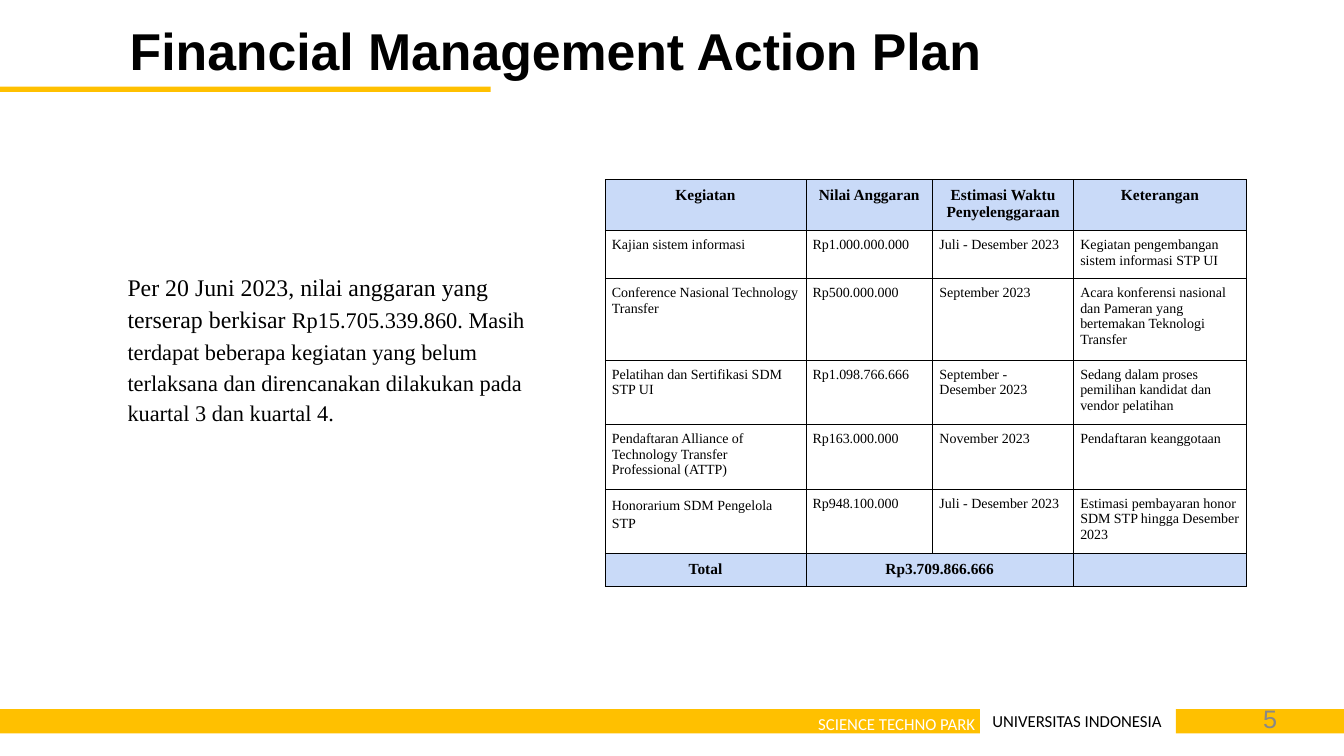
import pptx
import pptx.dml.color
import pptx.enum.shapes
import pptx.enum.text
import pptx.oxml
import pptx.oxml.ns
import pptx.util
from dataclasses import dataclass
from lxml import etree

Pt = pptx.util.Pt
ALIGN = pptx.enum.text.PP_ALIGN


@dataclass(frozen=True)
class Theme:
    gold: str = "FFC000"
    ink: str = "000000"
    paper: str = "FFFFFF"
    page_grey: str = "888888"
    band: str = "C9DAF8"
    heading_font: str = "Arial"
    footer_font: str = "Calibri"
    body_font: str = "Times New Roman"
    title_size: float = 37
    lead_size: float = 17
    body_size: float = 16
    page_size: float = 18
    footer_size: float = 12
    head_size: float = 11
    cell_size: float = 10


THEME = Theme()
HEADINGS = ["Kegiatan", "Nilai Anggaran", "Estimasi Waktu Penyelenggaraan", "Keterangan"]
ACTIVITIES = [
    ["Kajian sistem informasi", "Rp1.000.000.000", "Juli - Desember 2023",
     "Kegiatan pengembangan sistem informasi STP UI"],
    ["Conference Nasional Technology Transfer", "Rp500.000.000", "September 2023",
     "Acara konferensi nasional dan Pameran yang bertemakan Teknologi Transfer"],
    ["Pelatihan dan Sertifikasi SDM STP UI", "Rp1.098.766.666", "September - Desember 2023",
     "Sedang dalam proses pemilihan kandidat dan vendor pelatihan"],
    ["Pendaftaran Alliance of Technology Transfer Professional (ATTP)", "Rp163.000.000",
     "November 2023", "Pendaftaran keanggotaan"],
    ["Honorarium SDM Pengelola STP", "Rp948.100.000", "Juli - Desember 2023",
     "Estimasi pembayaran honor SDM STP hingga Desember 2023"],
]
TOTALS = ["Total", "Rp3.709.866.666", "", ""]
COLUMN_WIDTHS = [143.3, 90.7, 100.6, 123.5]
ROW_HEIGHTS = [36.4, 34.3, 57.9, 45.8, 46.2, 45.8, 23.6]


def rgb(value):
    return pptx.dml.color.RGBColor.from_string(value)


def add_run(paragraph, text, font, size, color=THEME.ink, bold=False):
    run = paragraph.add_run()
    run.text = text
    run.font.name = font
    run.font.size = Pt(size)
    run.font.bold = bold
    run.font.color.rgb = rgb(color)


def add_bar(slide, left, top, width, height):
    bar = slide.shapes.add_shape(pptx.enum.shapes.MSO_SHAPE.RECTANGLE,
                                 Pt(left), Pt(top), Pt(width), Pt(height))
    bar.shadow.inherit = False
    bar.fill.solid()
    bar.fill.fore_color.rgb = rgb(THEME.gold)
    bar.line.fill.background()


def add_text(slide, box, insets, align=ALIGN.LEFT, indent=0.0):
    frame = slide.shapes.add_textbox(*map(Pt, box)).text_frame
    frame.word_wrap = True
    frame.auto_size = pptx.enum.text.MSO_AUTO_SIZE.SHAPE_TO_FIT_TEXT
    (frame.margin_left, frame.margin_top,
     frame.margin_right, frame.margin_bottom) = map(Pt, insets)
    paragraph = frame.paragraphs[0]
    paragraph.alignment = align
    if indent:
        paragraph._p.get_or_add_pPr().set("marL", str(Pt(indent)))
    return paragraph


def add_borders(cell):
    properties = cell._tc.get_or_add_tcPr()
    for side in ("a:lnL", "a:lnR", "a:lnT", "a:lnB"):
        border = etree.SubElement(properties, pptx.oxml.ns.qn(side), w=str(Pt(0.5)))
        fill = etree.SubElement(border, pptx.oxml.ns.qn("a:solidFill"))
        etree.SubElement(fill, pptx.oxml.ns.qn("a:srgbClr"), val=THEME.ink)


def fill_cell(cell, text, emphasized):
    cell.margin_left = cell.margin_right = Pt(4.8)
    cell.margin_top = cell.margin_bottom = Pt(5)
    add_borders(cell)
    if emphasized:
        cell.fill.solid()
        cell.fill.fore_color.rgb = rgb(THEME.band)
    else:
        cell.fill.background()
    paragraph = cell.text_frame.paragraphs[0]
    paragraph.alignment = ALIGN.CENTER if emphasized else ALIGN.LEFT
    size = THEME.head_size if emphasized else THEME.cell_size
    if text:
        add_run(paragraph, text, THEME.body_font, size, bold=emphasized)
    else:
        etree.SubElement(paragraph._p, pptx.oxml.ns.qn("a:endParaRPr"), sz=str(int(size * 100)))


def add_budget_table(slide, left, top):
    rows = [HEADINGS, *ACTIVITIES, TOTALS]
    last = len(rows) - 1
    budget = slide.shapes.add_table(len(rows), len(HEADINGS), Pt(left), Pt(top),
                                    Pt(sum(COLUMN_WIDTHS)), Pt(sum(ROW_HEIGHTS))).table
    budget.first_row = budget.horz_banding = False
    for column, width in zip(budget.columns, COLUMN_WIDTHS):
        column.width = Pt(width)
    for row, height in zip(budget.rows, ROW_HEIGHTS):
        row.height = Pt(height)
    for r, texts in enumerate(rows):
        for c, text in enumerate(texts):
            fill_cell(budget.cell(r, c), text, r in (0, last))
    budget.cell(last, 1).merge(budget.cell(last, 2))
    budget.cell(last - 1, 0).text_frame.paragraphs[0].line_spacing = 1.15


def main():
    deck = pptx.Presentation()
    deck.slide_width, deck.slide_height = Pt(960), Pt(540)
    slide = deck.slides.add_slide(deck.slide_layouts[6])

    add_bar(slide, 0, 61.9, 350.6, 3.7)
    add_bar(slide, 0, 506.6, 700, 17.3)
    add_bar(slide, 840, 506.6, 120, 17.3)

    line_insets = (0, 1, 0, 0)
    title = add_text(slide, (91.7, 12.3, 657, 46), line_insets, indent=1)
    add_run(title, "Financial Management Action Plan", THEME.heading_font,
            THEME.title_size, bold=True)
    unit = add_text(slide, (447.8, 508.8, 249, 15.4), line_insets, ALIGN.RIGHT, 1)
    add_run(unit, "SCIENCE TECHNO PARK", THEME.footer_font, THEME.footer_size, THEME.paper)
    university = add_text(slide, (707.8, 506.7, 124.6, 15.4), line_insets, indent=1)
    add_run(university, "UNIVERSITAS INDONESIA", THEME.footer_font, THEME.footer_size)
    page = add_text(slide, (691.2, 502.2, 221, 21.6), (0, 0, 0, 0), ALIGN.RIGHT)
    add_run(page, "5", THEME.heading_font, THEME.page_size, THEME.page_grey)

    add_budget_table(slide, 432.3, 128.2)

    summary = add_text(slide, (48, 184.3, 360.7, 126), (7.2,) * 4, indent=36)
    summary.line_spacing = 1.15
    add_run(summary, "Per 20 Juni 2023, nilai anggaran yang terserap berkisar ",
            THEME.body_font, THEME.lead_size)
    add_run(summary, "Rp15.705.339.860. Masih terdapat beberapa kegiatan yang belum "
            "terlaksana dan direncanakan dilakukan pada kuartal 3 dan kuartal 4.",
            THEME.body_font, THEME.body_size)

    deck.save("out.pptx")


if __name__ == "__main__":
    main()
